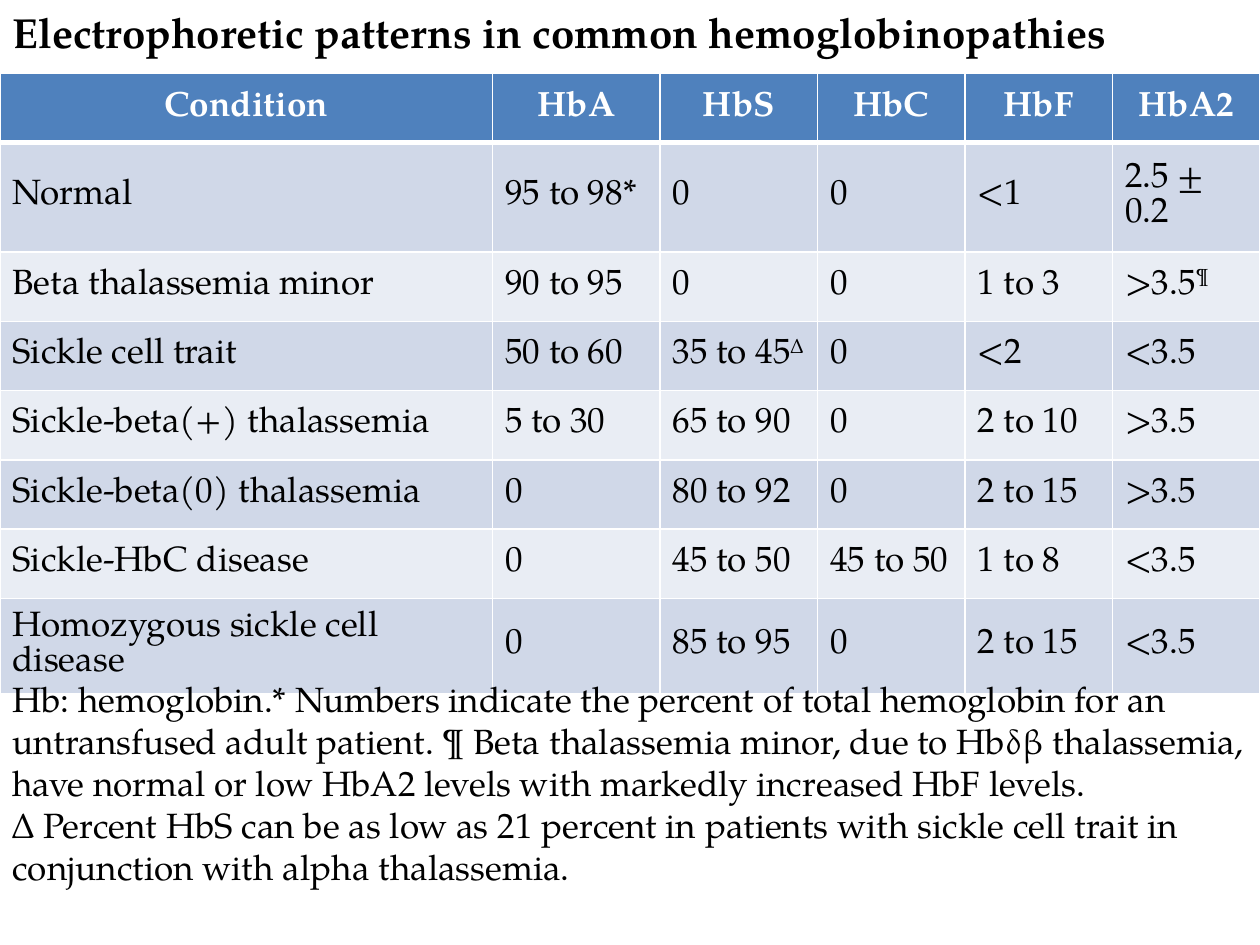
"""Build a slide with a table of electrophoretic patterns in common hemoglobinopathies."""
from dataclasses import dataclass

from lxml.etree import SubElement
from pptx import Presentation
from pptx.dml.color import RGBColor
from pptx.enum.text import MSO_ANCHOR, PP_ALIGN
from pptx.oxml.ns import qn
from pptx.util import Inches, Pt

TITLE = "Electrophoretic patterns in common hemoglobinopathies"
HEADER = ("Condition", "HbA", "HbS", "HbC", "HbF", "HbA2")
CONDITIONS = [
    ("Normal", "95 to 98*", "0", "0", "<1", "2.5 ± 0.2"),
    ("Beta thalassemia minor", "90 to 95", "0", "0", "1 to 3", ">3.5¶"),
    ("Sickle cell trait", "50 to 60", "35 to 45Δ", "0", "<2", "<3.5"),
    ("Sickle-beta(+) thalassemia", "5 to 30", "65 to 90", "0", "2 to 10", ">3.5"),
    ("Sickle-beta(0) thalassemia", "0", "80 to 92", "0", "2 to 15", ">3.5"),
    ("Sickle-HbC disease", "0", "45 to 50", "45 to 50", "1 to 8", "<3.5"),
    ("Homozygous sickle cell disease", "0", "85 to 95", "0", "2 to 15", "<3.5"),
]
NOTES = (
    "Hb: hemoglobin.* Numbers indicate the percent of total hemoglobin for an "
    "untransfused adult patient. ¶ Beta thalassemia minor, due to Hbδβ "
    "thalassemia, have normal or low HbA2 levels with markedly increased HbF levels.\v"
    "Δ Percent HbS can be as low as 21 percent in patients with sickle cell trait "
    "in conjunction with alpha thalassemia."
)
FOOTNOTE_MARKS = "¶Δ"
COLUMN_WIDTHS = (3.91, 1.33, 1.25, 1.17, 1.17, 1.17)
ROW_HEIGHT = 0.55
NORMAL_ROW_HEIGHT = 0.87


@dataclass(frozen=True)
class Theme:
    """Colours, font and type sizes of the slide."""
    font: str = "TeX Gyre Pagella"
    title_size: int = 24
    body_size: int = 20
    text: str = "000000"
    white: str = "FFFFFF"
    header: str = "4F81BD"
    bands: tuple = ("D0D8E8", "E9EDF4")


THEME = Theme()


def set_font(paragraph, size, color, bold=False):
    """Apply the slide font to a paragraph."""
    font = paragraph.font
    font.name, font.size, font.bold = THEME.font, Pt(size), bold
    font.color.rgb = RGBColor.from_string(color)


def add_text(slide, text, left, top, width, height, size, bold=False):
    """Add a wrapping text box."""
    shape = slide.shapes.add_textbox(*map(Inches, (left, top, width, height)))
    shape.text_frame.word_wrap = True
    paragraph = shape.text_frame.paragraphs[0]
    paragraph.text = text
    set_font(paragraph, size, THEME.text, bold)


def set_borders(cell, bottom_width):
    """Draw white borders on the four sides of a cell."""
    properties = cell._tc.get_or_add_tcPr()
    widths = {"lnL": 1, "lnR": 1, "lnT": 1, "lnB": bottom_width}
    for index, (side, width) in enumerate(widths.items()):
        line = SubElement(properties, qn(f"a:{side}"), w=str(Pt(width)))
        properties.insert(index, line)
        fill = SubElement(line, qn("a:solidFill"))
        SubElement(fill, qn("a:srgbClr"), val=THEME.white)


def fill_cell(cell, text, row_index):
    """Write and style one table cell."""
    is_header = row_index == 0
    color = THEME.header if is_header else THEME.bands[(row_index - 1) % 2]
    cell.fill.solid()
    cell.fill.fore_color.rgb = RGBColor.from_string(color)
    set_borders(cell, 3 if is_header else 1)
    cell.vertical_anchor = MSO_ANCHOR.MIDDLE
    cell.margin_top = cell.margin_bottom = Inches(0.1)
    paragraph = cell.text_frame.paragraphs[0]
    value = text.rstrip(FOOTNOTE_MARKS)
    paragraph.add_run().text = value
    if value != text:
        mark = paragraph.add_run()
        mark.text = text[len(value):]
        mark.font._element.set("baseline", "30000")
    paragraph.alignment = PP_ALIGN.CENTER if is_header else PP_ALIGN.LEFT
    paragraph.line_spacing = Pt(THEME.body_size)
    set_font(paragraph, THEME.body_size, THEME.white if is_header else THEME.text, is_header)


def add_pattern_table(slide):
    """Add the table of hemoglobin percentages."""
    rows = [HEADER, *CONDITIONS]
    heights = [NORMAL_ROW_HEIGHT if row[0] == "Normal" else ROW_HEIGHT for row in rows]
    frame = slide.shapes.add_table(
        len(rows), len(HEADER), 0, Inches(0.58), Inches(sum(COLUMN_WIDTHS)), Inches(sum(heights)))
    table = frame.table
    for column, width in zip(table.columns, COLUMN_WIDTHS):
        column.width = Inches(width)
    for row_index, (row, height) in enumerate(zip(rows, heights)):
        table.rows[row_index].height = Inches(height)
        for column_index, text in enumerate(row):
            fill_cell(table.cell(row_index, column_index), text, row_index)


def main():
    """Build and save the presentation."""
    presentation = Presentation()
    presentation.slide_width, presentation.slide_height = Inches(10), Inches(7.5)
    slide = presentation.slides.add_slide(presentation.slide_layouts[6])
    add_text(slide, TITLE, 0, 0, 9.75, 0.5, THEME.title_size, bold=True)
    add_pattern_table(slide)
    add_text(slide, NOTES, 0, 5.33, 10, 1.78, THEME.body_size)
    presentation.save("out.pptx")


if __name__ == "__main__":
    main()
